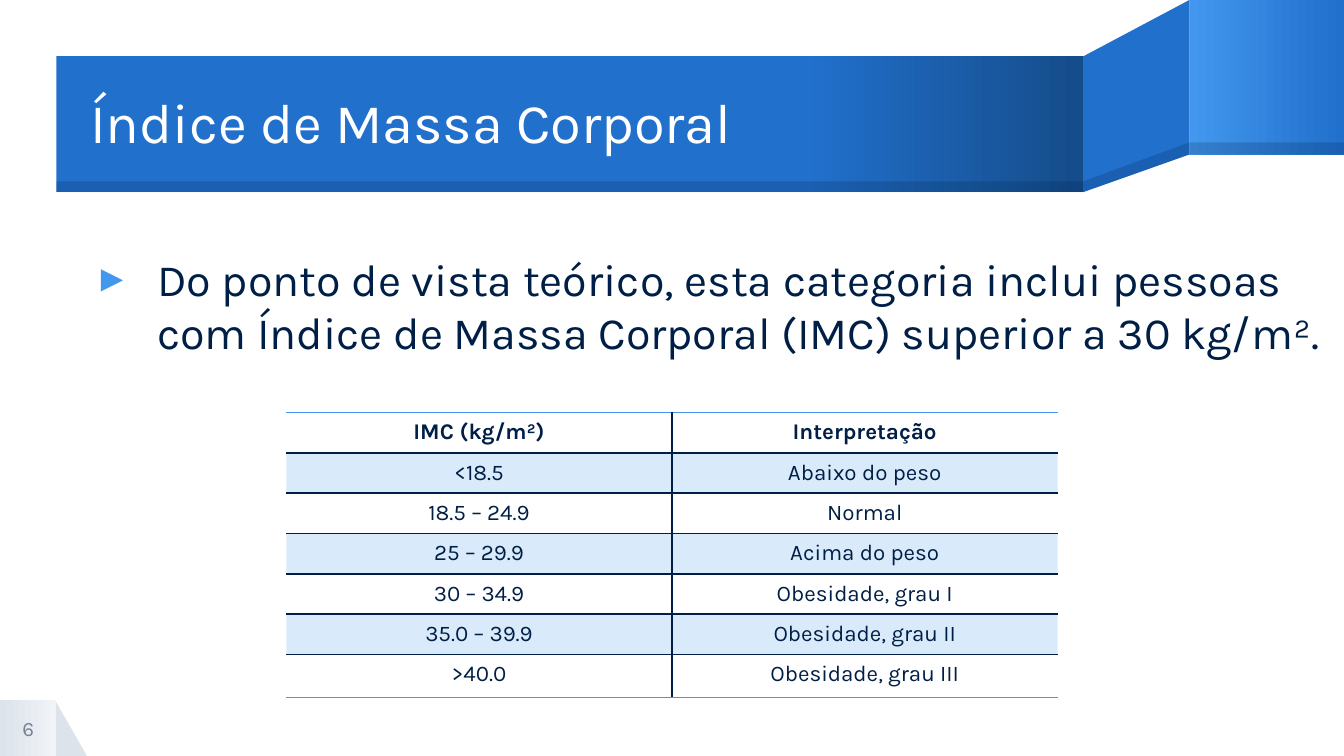
from lxml import etree
from pptx import Presentation
from pptx.dml.color import RGBColor
from pptx.enum.shapes import MSO_SHAPE
from pptx.enum.text import MSO_ANCHOR, MSO_AUTO_SIZE, PP_ALIGN
from pptx.oxml import parse_xml
from pptx.oxml.ns import qn
from pptx.util import Inches, Pt

RECT, WEDGE = MSO_SHAPE.RECTANGLE, MSO_SHAPE.RIGHT_TRIANGLE
MIDDLE, TOP = MSO_ANCHOR.MIDDLE, MSO_ANCHOR.TOP
LEFT, CENTER = PP_ALIGN.LEFT, PP_ALIGN.CENTER
NO_FIT = MSO_AUTO_SIZE.NONE
NS = "http://schemas.openxmlformats.org/drawingml/2006/main"
FONT = "Karla"
NAVY, BLUE, SKY, DEEP = "001F46", "2170CC", "4397EE", "154C8A"
WHITE, MIST, PALE, GRAY = "FFFFFF", "DDE3EB", "F0F3F7", "748394"
rgb = RGBColor.from_string


def paint(item, tone, alpha=None):
    """Fill a shape or cell with one colour, alpha in percent."""
    item.fill.solid()
    item.fill.fore_color.rgb = rgb(tone)
    if alpha:
        box = item.element.spPr if hasattr(item, "element") else item._tc.tcPr
        tint = box.find(qn("a:solidFill")).find(qn("a:srgbClr"))
        etree.SubElement(tint, qn("a:alpha"), val=str(alpha * 1000))


def write(frame, text, size, tone, align, bold=False):
    para = frame.paragraphs[0]
    para.alignment = align
    run = para.add_run()
    run.text = text
    look = {"name": FONT, "size": Pt(size), "bold": bold}
    for key, value in look.items():
        setattr(run.font, key, value)
    run.font.color.rgb = rgb(tone)
    return para


deck = Presentation()
deck.slide_width, deck.slide_height = Inches(10), Inches(10 * 9 / 16)
slide = deck.slides.add_slide(deck.slide_layouts[5])
shapes = slide.shapes

# Ribbon and page corner: preset, place, colour stops, alpha
blocks = [
    (WEDGE, (0.41, 5.21, 0.24, 0.42), [(0, MIST)], None),
    (RECT, (0, 5.21, 0.42, 0.42), [(0, MIST), (1, PALE)], None),
    (RECT, (8.85, 0, 1.15, 1.15), [(0, SKY), (1, BLUE)], None),
    (RECT, (0.42, 0.42, 7.64, 1.01), [(0.73, BLUE), (1, DEEP)], None),
    (RECT, (8.85, 1.06, 1.15, 0.09), [(0, NAVY)], 20),
    (RECT, (0.42, 1.35, 7.64, 0.08), [(0, NAVY)], 20),
]
for kind, place, stops, alpha in blocks:
    block = shapes.add_shape(kind, *map(Inches, place))
    block.shadow.inherit = False
    block.line.fill.background()
    if len(stops) == 1:
        paint(block, stops[0][1], alpha)
        continue
    block.fill.gradient()
    block.fill.gradient_angle = 0
    for stop, (spot, tone) in zip(block.fill.gradient_stops, stops):
        stop.position = spot
        stop.color.rgb = rgb(tone)

# Slanted fold and its shaded foot: right top, left top, colour, alpha
for right, left, tone, alpha in [(0, 0.42, BLUE, None), (1.06, 1.35, NAVY, 20)]:
    points = [(8.85, right), (8.06, left), (8.06, 1.43), (8.85, 1.15)]
    points = [(Inches(x), Inches(y)) for x, y in points]
    pen = shapes.build_freeform(*points[0])
    pen.add_line_segments(points[1:], close=True)
    fold = pen.convert_to_shape()
    fold.shadow.inherit = False
    fold.line.fill.background()
    paint(fold, tone, alpha)

# Title, body and page number
title = shapes.title
title.element.getparent().append(title.element)
body = shapes.add_textbox(0, 0, 0, 0)
page = shapes.add_textbox(0, 0, 0, 0)
places = [
    (title, (0.67, 0.43, 7.39, 1.01), MIDDLE),
    (body, (0.67, 1.87, 9.21, 3.09), TOP),
    (page, (0, 5.21, 0.42, 0.42), MIDDLE),
]
for box, place, anchor in places:
    for key, value in zip(("left", "top", "width", "height"), place):
        setattr(box, key, Inches(value))
    form = {"word_wrap": True, "auto_size": NO_FIT, "vertical_anchor": anchor,
            "margin_left": 0, "margin_top": 0, "margin_right": 0, "margin_bottom": 0}
    for key, value in form.items():
        setattr(box.text_frame, key, value)

head = write(title.text_frame, "Índice de Massa Corporal", 30, WHITE, LEFT)
head.line_spacing = 0.9
point = write(
    body.text_frame,
    "Do ponto de vista teórico, esta categoria inclui pessoas com "
    "Índice de Massa Corporal (IMC) superior a 30 kg/m².",
    24, NAVY, LEFT)
props = point._p.get_or_add_pPr()
props.set("marL", str(Inches(0.5)))
props.set("indent", str(Inches(-0.42)))
tint = etree.SubElement(props, qn("a:buClr"))
etree.SubElement(tint, qn("a:srgbClr"), val=SKY)
etree.SubElement(props, qn("a:buFont"), typeface=FONT)
etree.SubElement(props, qn("a:buChar"), char="▸")
write(page.text_frame, "6", 11, GRAY, CENTER)

# Table of ranges
rows = [
    ("IMC (kg/m²)", "Interpretação"),
    ("<18.5", "Abaixo do peso"),
    ("18.5 – 24.9", "Normal"),
    ("25 – 29.9", "Acima do peso"),
    ("30 – 34.9", "Obesidade, grau I"),
    ("35.0 – 39.9", "Obesidade, grau II"),
    (">40.0", "Obesidade, grau III"),
]
last = len(rows) - 1
frame = shapes.add_table(len(rows), 2, Inches(2.13), Inches(3.07), Inches(5.74), Inches(2.12))
table = frame.table
table.first_row = table.horz_banding = False
for col in table.columns:
    col.width = Inches(2.87)
for r, row in enumerate(rows):
    table.rows[r].height = Inches(0.32 if r == last else 0.3)
    for c, text in enumerate(row):
        cell = table.cell(r, c)
        write(cell.text_frame, text, 12, NAVY, CENTER, bold=r == 0)
        edges = {
            "lnL": NAVY if c else None,
            "lnR": None if c else NAVY,
            "lnT": NAVY if r else SKY,
            "lnB": SKY if r == last else NAVY,
        }
        for side, tone in edges.items():
            fill = (f'<a:solidFill><a:srgbClr val="{tone}"/></a:solidFill>'
                    if tone else "<a:noFill/>")
            cell._tc.get_or_add_tcPr().append(parse_xml(
                f'<a:{side} xmlns:a="{NS}" w="{Pt(1)}">{fill}</a:{side}>'))
        if r % 2:
            paint(cell, SKY, 20)
        else:
            cell.fill.background()

deck.save("out.pptx")
